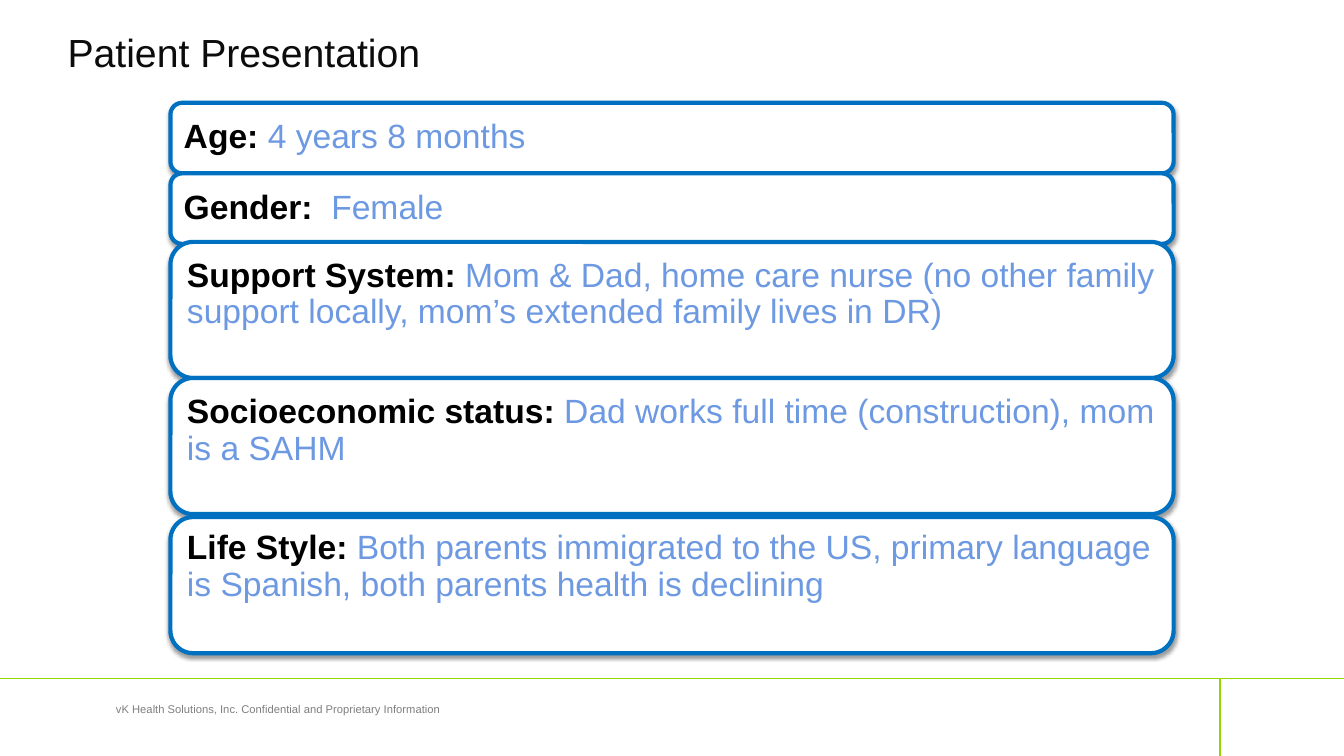
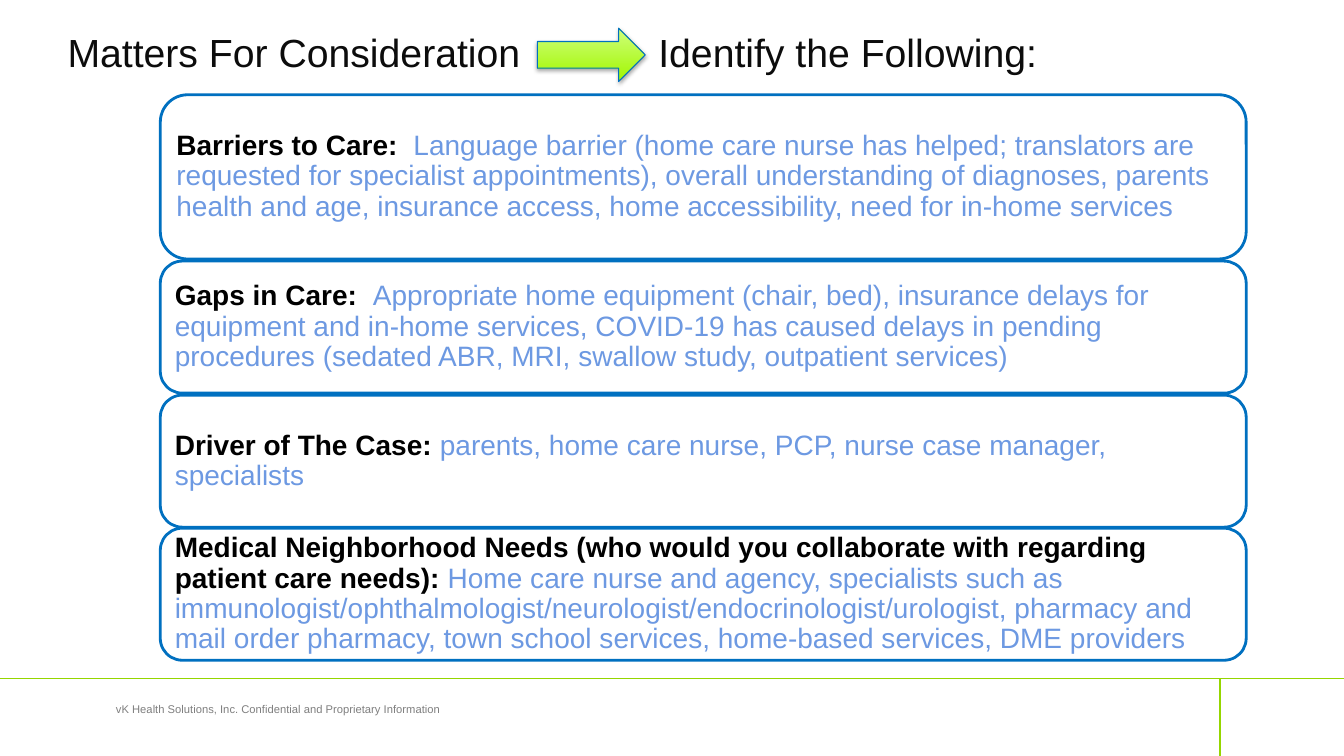
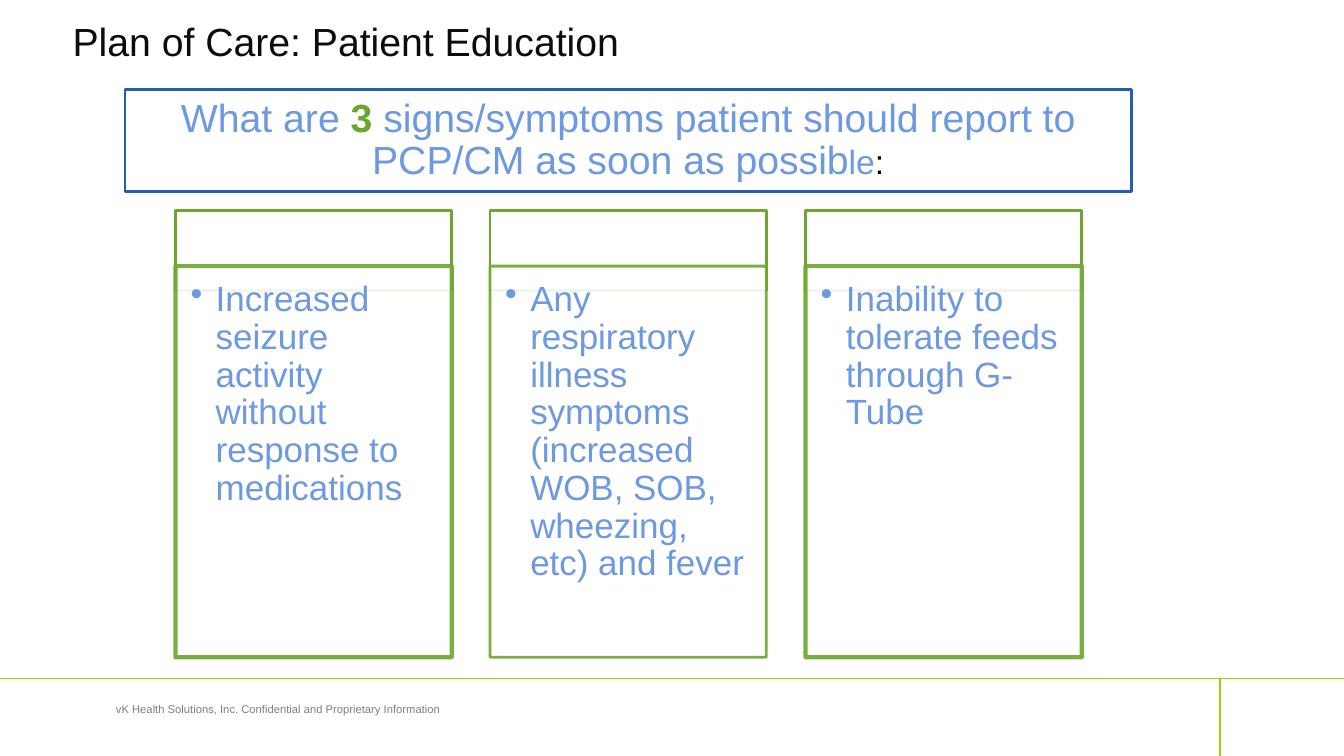
"""Build three slides of a patient case: presentation, matters and plan of care."""
from dataclasses import dataclass
from typing import Optional

from lxml import etree
from pptx import Presentation, util as u
from pptx.dml.color import RGBColor
from pptx.enum import shapes as sh, text as tx
from pptx.oxml.ns import qn

PX = 9144
WIDE, HIGH = 1333, 750
FONT = "Arial"
WHITE, BLACK, INK, GREY = "FFFFFF", "000000", "0C0C0C", "7F7F7F"
SKY, BLUE, NAVY = "6D99E2", "0070C0", "255CB8"
LIME, GREEN = "95D600", "6CA62C"
RULE_Y, RULE_X = 673, 1210
FOOTER = "vK Health Solutions, Inc. Confidential and Proprietary Information"


@dataclass
class Run:
    """A piece of text with its own look."""
    text: str
    color: str = SKY
    bold: bool = False
    size: Optional[int] = None


@dataclass
class Box:
    """A place on the slide in px."""
    x: int
    y: int
    w: int
    h: int


@dataclass
class Card:
    """A labelled fact in a rounded box."""
    top: int
    high: int
    label: str
    fact: str
    middle: bool = True
    inset: int = 10


@dataclass
class Sign:
    """A symptom column with its border width."""
    text: str
    line: int


def px(n: int) -> u.Emu:
    """Turn px into EMU."""
    return u.Emu(n * PX)


def rgb(code: str) -> RGBColor:
    """Turn a hex string into a colour."""
    return RGBColor.from_string(code)


def place(box: Box) -> tuple:
    """Give a box as EMU lengths."""
    return px(box.x), px(box.y), px(box.w), px(box.h)


def write(frame, runs: list, size: int, pads: tuple = (0, 0, 0, 0), align=tx.PP_ALIGN.LEFT,
          anchor=tx.MSO_ANCHOR.TOP, gap: float = 1.0, bullet: int = 0) -> None:
    """Fill a text frame with one paragraph."""
    frame.word_wrap = True
    frame.vertical_anchor = anchor
    frame.margin_left, frame.margin_top, frame.margin_right, frame.margin_bottom = map(px, pads)
    para = frame.paragraphs[0]
    para.alignment = align
    para.line_spacing = gap
    if bullet:
        props = para._p.get_or_add_pPr()
        props.set("marL", str(px(bullet)))
        props.set("indent", str(-px(bullet)))
        tint = etree.SubElement(props, qn("a:buClr"))
        etree.SubElement(tint, qn("a:srgbClr"), val=SKY)
        etree.SubElement(props, qn("a:buChar"), char="•")
    para.font.name = FONT
    para.font.size = u.Pt(size)
    same = len({(r.color, r.bold) for r in runs}) == 1
    if same:
        para.font.color.rgb = rgb(runs[0].color)
        para.font.bold = runs[0].bold
    for item in runs:
        run = para.add_run()
        run.text = item.text
        if not same:
            run.font.color.rgb = rgb(item.color)
            run.font.bold = item.bold
        if item.size:
            run.font.size = u.Pt(item.size)


def label(slide, box: Box, text: str, size: int, color: str, **look) -> None:
    """Add a plain text box."""
    frame = slide.shapes.add_textbox(*place(box)).text_frame
    write(frame, [Run(text, color)], size, **look)


def title(slide, text: str, x: int = 67, y: int = 28, w: int = 950) -> None:
    """Add a slide title."""
    label(slide, Box(x, y, w, 52), text, 28, INK)


def panel(slide, kind, box: Box, line: str, width: float):
    """Add a white shape with a coloured border."""
    shape = slide.shapes.add_shape(kind, *place(box))
    shape.shadow.inherit = False
    shape.fill.solid()
    shape.fill.fore_color.rgb = rgb(WHITE)
    shape.line.color.rgb = rgb(line)
    shape.line.width = u.Pt(width)
    return shape


def shade(shape, alpha: int) -> None:
    """Drop a soft shadow below a shape."""
    effect = shape._element.spPr.find(qn("a:effectLst"))
    drop = etree.SubElement(effect, qn("a:outerShdw"), blurRad=str(u.Pt(3.1)),
                            dist=str(u.Pt(1.7)), dir="5400000", rotWithShape="0")
    tint = etree.SubElement(drop, qn("a:srgbClr"), val=BLACK)
    etree.SubElement(tint, qn("a:alpha"), val=str(alpha * 1000))


def fade(shape, alpha: int) -> None:
    """Make the fill and border of a shape see-through."""
    for tint in shape._element.spPr.iter(qn("a:srgbClr")):
        etree.SubElement(tint, qn("a:alpha"), val=str(alpha * 1000))


def rule(slide, x1: int, y1: int, x2: int, y2: int) -> None:
    """Draw a thin line."""
    line = slide.shapes.add_connector(sh.MSO_CONNECTOR.STRAIGHT, px(x1), px(y1), px(x2), px(y2))
    line.line.color.rgb = rgb(LIME)
    line.line.width = u.Pt(0.75)
    etree.SubElement(line._element.spPr, qn("a:effectLst"))


def start(deck):
    """Add a blank slide with the shared lines and footer."""
    slide = deck.slides.add_slide(deck.slide_layouts[6])
    rule(slide, RULE_X, HIGH, RULE_X, RULE_Y)
    rule(slide, 0, RULE_Y, WIDE, RULE_Y)
    label(slide, Box(42, 692, 468, 42), FOOTER, 8, GREY,
          pads=(10, 5, 10, 5), align=tx.PP_ALIGN.CENTER)
    return slide


def stack(slide, cards: list, x: int, w: int, size: int, line: int, side: int, drop: int = 0) -> None:
    """Draw a column of cards."""
    for card in cards:
        box = Box(x, card.top, w, card.high)
        shape = panel(slide, sh.MSO_SHAPE.ROUNDED_RECTANGLE, box, BLUE, line)
        if drop:
            shade(shape, drop)
        write(shape.text_frame, [Run(card.label, BLACK, True), Run(card.fact)], size,
              pads=(side, card.inset, side, card.inset), gap=0.9,
              anchor=tx.MSO_ANCHOR.MIDDLE if card.middle else tx.MSO_ANCHOR.TOP)


def patient(deck) -> None:
    """Build the patient slide."""
    slide = start(deck)
    title(slide, "Patient Presentation")
    cards = [
        Card(102, 70, "Age: ", "4 years 8 months"),
        Card(172, 70, "Gender:  ", "Female"),
        Card(240, 135, "Support System: ", "Mom & Dad, home care nurse (no other family "
             "support locally, mom’s extended family lives in DR)", False),
        Card(375, 135, "Socioeconomic status: ",
             "Dad works full time (construction), mom is a SAHM", False),
        Card(513, 135, "Life Style: ", "Both parents immigrated to the US, primary language "
             "is Spanish, both parents health is declining", False, 7),
    ]
    stack(slide, cards, 169, 995, 24, 3, 10, 38)


def matters(deck) -> None:
    """Build the matters slide."""
    slide = start(deck)
    title(slide, "Matters For Consideration", w=460)
    title(slide, "Identify the Following:", x=653, w=440)
    arrow = panel(slide, sh.MSO_SHAPE.RIGHT_ARROW, Box(533, 28, 107, 53), BLUE, 0.75)
    arrow.fill.gradient()
    arrow.fill.gradient_angle = 90
    for stop, code, spot in zip(arrow.fill.gradient_stops, ("A1F600", "CFFF7B"), (0, 1)):
        stop.color.rgb = rgb(code)
        stop.position = spot
    shade(arrow, 35)
    cards = [
        Card(94, 163, "Barriers to Care:  ", "Language barrier (home care nurse has helped; "
             "translators are requested for specialist appointments), overall understanding of "
             "diagnoses, parents health and age, insurance access, home accessibility, need for "
             "in-home services", inset=8),
        Card(259, 131, "Gaps in Care:  ", "Appropriate home equipment (chair, bed), insurance "
             "delays for equipment and in-home services, COVID-19 has caused delays in pending "
             "procedures (sedated ABR, MRI, swallow study, outpatient services)", inset=8),
        Card(392, 131, "Driver of The Case: ",
             "parents, home care nurse, PCP, nurse case manager, specialists", inset=8),
        Card(524, 131, "Medical Neighborhood Needs (who would you collaborate with regarding "
             "patient care needs): ", "Home care nurse and agency, specialists such as "
             "immunologist/ophthalmologist/neurologist/endocrinologist/urologist, pharmacy and "
             "mail order pharmacy, town school services, home-based services, DME providers",
             inset=8),
    ]
    stack(slide, cards, 159, 1077, 20, 2, 8)


def plan(deck) -> None:
    """Build the plan of care slide."""
    slide = start(deck)
    title(slide, "Plan of Care: Patient Education", 72, 17)
    ask = panel(slide, sh.MSO_SHAPE.RECTANGLE, Box(124, 89, 998, 101), NAVY, 2)
    runs = [
        Run("What are "),
        Run("3", GREEN, True),
        Run(" signs/symptoms patient should report to PCP/CM as soon as possib"),
        Run("le", size=24),
        Run(":", BLACK, size=24),
    ]
    write(ask.text_frame, runs, 28, (9, 5, 9, 5), tx.PP_ALIGN.CENTER, tx.MSO_ANCHOR.MIDDLE, 0.9)
    signs = [
        Sign("Increased seizure activity without response to medications", 3),
        Sign("Any respiratory illness symptoms (increased WOB, SOB, wheezing, etc) and fever", 2),
        Sign("Inability to tolerate feeds through G-Tube", 3),
    ]
    for i, sign in enumerate(signs):
        x = 174 + i * 625 // 2
        panel(slide, sh.MSO_SHAPE.RECTANGLE, Box(x, 209, 274, 79), GREEN, 2)
        body = panel(slide, sh.MSO_SHAPE.RECTANGLE, Box(x, 264, 274, 388), GREEN, sign.line)
        fade(body, 90)
        write(body.text_frame, [Run(sign.text)], 25, (15, 15, 19, 22), gap=0.9, bullet=25)


def main() -> None:
    """Build and save the deck."""
    deck = Presentation()
    deck.slide_width, deck.slide_height = px(WIDE), px(HIGH)
    for build in (patient, matters, plan):
        build(deck)
    deck.save("out.pptx")


if __name__ == "__main__":
    main()
